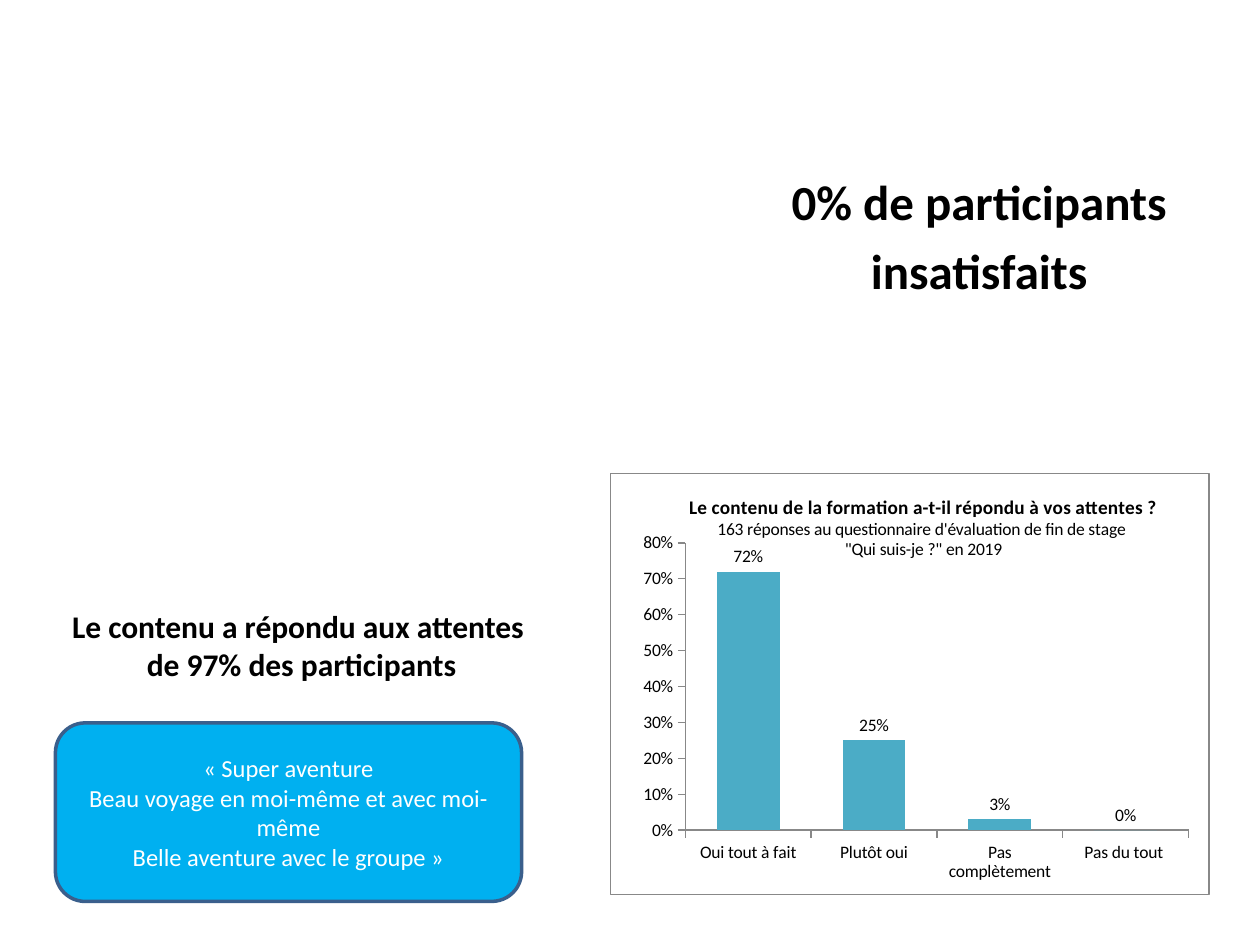
from lxml.etree import SubElement, fromstring
from pptx import Presentation
from pptx.chart.data import CategoryChartData
from pptx.dml.color import RGBColor as RGB
from pptx.enum.chart import XL_CHART_TYPE as CT, XL_LABEL_POSITION as LP, XL_TICK_MARK as TM
from pptx.enum.shapes import MSO_SHAPE as MS
from pptx.enum.text import MSO_ANCHOR as MA, PP_ALIGN as PA
from pptx.oxml.ns import qn
from pptx.util import Inches, Pt

W, H = 10, 7.5
THEME = dict(
    font="Calibri", text="000000", paper="FFFFFF", bar="4BACC6", axis="888888",
    quote="00B0F0", quote_line="3A5F8C",
    headline=28, claim=18, body=14, chart_title=11, chart=10,
)
HEADLINE = ["0% de participants ", "insatisfaits "]
CLAIM = ["Le contenu a répondu aux attentes ", "de 97% des participants"]
QUOTE = ["« Super aventure", "Beau voyage en moi-même et avec moi-même", "Belle aventure avec le groupe »"]
CHART_TITLE = [
    ("Le contenu de la formation a-t-il répondu à vos attentes ? ", "chart_title", True),
    ("163 réponses au questionnaire d'évaluation de fin de stage ", "chart", False),
    ('"Qui suis-je ?" en 2019', "chart", False),
]
ANSWERS = {"Oui tout à fait": 0.72, "Plutôt oui": 0.25, "Pas complètement": 0.03, "Pas du tout ": 0}
BOXES = dict(
    headline=(0.563, 0.175, 0.437, 0.147),
    chart=(0.484, 0.5, 0.476, 0.447),
    claim=(0.003, 0.636, 0.473, 0.095),
    quote=(0.044, 0.765, 0.37, 0.189),
)
TITLE_AT = dict(x=0.125, y=0.04)
PLOT_AT = dict(x=0.125, y=0.166, w=0.841, h=0.682)


def color(name):
    return RGB.from_string(THEME[name])


def place(name):
    x, y, w, h = BOXES[name]
    return Inches(x * W), Inches(y * H), Inches(w * W), Inches(h * H)


def style(font, size, bold=False, ink="text"):
    font.name, font.size, font.bold = THEME["font"], Pt(THEME[size]), bold
    font.color.rgb = color(ink)


def add_run(p, text, *look):
    r = p.add_run()
    r.text = text
    style(r.font, *look)


def next_paragraph(tf, i):
    p = tf.add_paragraph() if i else tf.paragraphs[0]
    p.alignment = PA.CENTER
    return p


def add_text(s, name):
    tf = s.shapes.add_textbox(*place(name)).text_frame
    tf.word_wrap = True
    return tf


def outline(line, name, width):
    line.color.rgb = color(name)
    line.width = Pt(width)


def set_layout(parent, after, at, inner=False):
    for old in parent.findall(qn("c:layout")):
        parent.remove(old)
    layout = parent.makeelement(qn("c:layout"))
    manual = SubElement(layout, qn("c:manualLayout"))
    if inner:
        SubElement(manual, qn("c:layoutTarget")).set("val", "inner")
    for key in "xy":
        SubElement(manual, qn(f"c:{key}Mode")).set("val", "edge")
    for key, value in at.items():
        SubElement(manual, qn(f"c:{key}")).set("val", str(value))
    if after is None:
        parent.insert(0, layout)
    else:
        after.addnext(layout)


def area_fill(border=None):
    line = f'<a:ln w="9525"><a:solidFill><a:srgbClr val="{border}"/></a:solidFill></a:ln>' if border else ""
    return fromstring(
        '<c:spPr xmlns:c="http://schemas.openxmlformats.org/drawingml/2006/chart" '
        'xmlns:a="http://schemas.openxmlformats.org/drawingml/2006/main">'
        f'<a:solidFill><a:srgbClr val="{THEME["paper"]}"/></a:solidFill>{line}</c:spPr>'
    )


def add_answers(s):
    data = CategoryChartData(number_format="0%")
    data.categories = list(ANSWERS)
    data.add_series("Series 1", list(ANSWERS.values()))
    chart = s.shapes.add_chart(CT.COLUMN_CLUSTERED, *place("chart"), data).chart
    style(chart.font, "chart")
    chart.has_legend = False

    title = chart.chart_title
    for i, (text, size, bold) in enumerate(CHART_TITLE):
        add_run(next_paragraph(title.text_frame, i), text, size, bold)
    c_title = chart._chartSpace.chart.find(qn("c:title"))
    set_layout(c_title, c_title.find(qn("c:tx")), TITLE_AT)

    for axis in (chart.category_axis, chart.value_axis):
        axis.has_major_gridlines = False
        axis.major_tick_mark, axis.minor_tick_mark = TM.OUTSIDE, TM.NONE
        style(axis.tick_labels.font, "chart")
        outline(axis.format.line, "axis", 0.75)
    values = chart.value_axis
    values.minimum_scale, values.maximum_scale, values.major_unit = 0, 0.8, 0.1
    values.tick_labels.number_format = "0%"
    values.tick_labels.number_format_is_linked = False

    plot = chart.plots[0]
    plot.gap_width, plot.vary_by_categories = 100, False
    fill = plot.series[0].format.fill
    fill.solid()
    fill.fore_color.rgb = color("bar")
    plot.has_data_labels = True
    labels = plot.data_labels
    labels.show_value, labels.position = True, LP.OUTSIDE_END
    labels.number_format, labels.number_format_is_linked = "0%", False
    style(labels.font, "chart")

    c_chart = chart._chartSpace.chart
    area = c_chart.plotArea
    set_layout(area, None, PLOT_AT, True)
    area.append(area_fill())
    c_chart.addnext(area_fill(THEME["axis"]))


def main():
    prs = Presentation()
    prs.slide_width, prs.slide_height = Inches(W), Inches(H)
    s = prs.slides.add_slide(prs.slide_layouts[6])

    tf = add_text(s, "headline")
    for i, text in enumerate(HEADLINE):
        p = next_paragraph(tf, i)
        p.space_before = Pt(THEME["headline"] * 0.2)
        add_run(p, text, "headline", True)

    add_answers(s)

    p = next_paragraph(add_text(s, "claim"), 0)
    for i, text in enumerate(CLAIM):
        if i:
            p.add_line_break()
        add_run(p, text, "claim", True)

    sp = s.shapes.add_shape(MS.ROUNDED_RECTANGLE, *place("quote"))
    sp.shadow.inherit = False
    sp.fill.solid()
    sp.fill.fore_color.rgb = color("quote")
    outline(sp.line, "quote_line", 2)
    sp.text_frame.word_wrap = True
    sp.text_frame.vertical_anchor = MA.MIDDLE
    for i, text in enumerate(QUOTE):
        add_run(next_paragraph(sp.text_frame, i), text, "body", False, "paper")

    prs.save("out.pptx")


if __name__ == "__main__":
    main()
